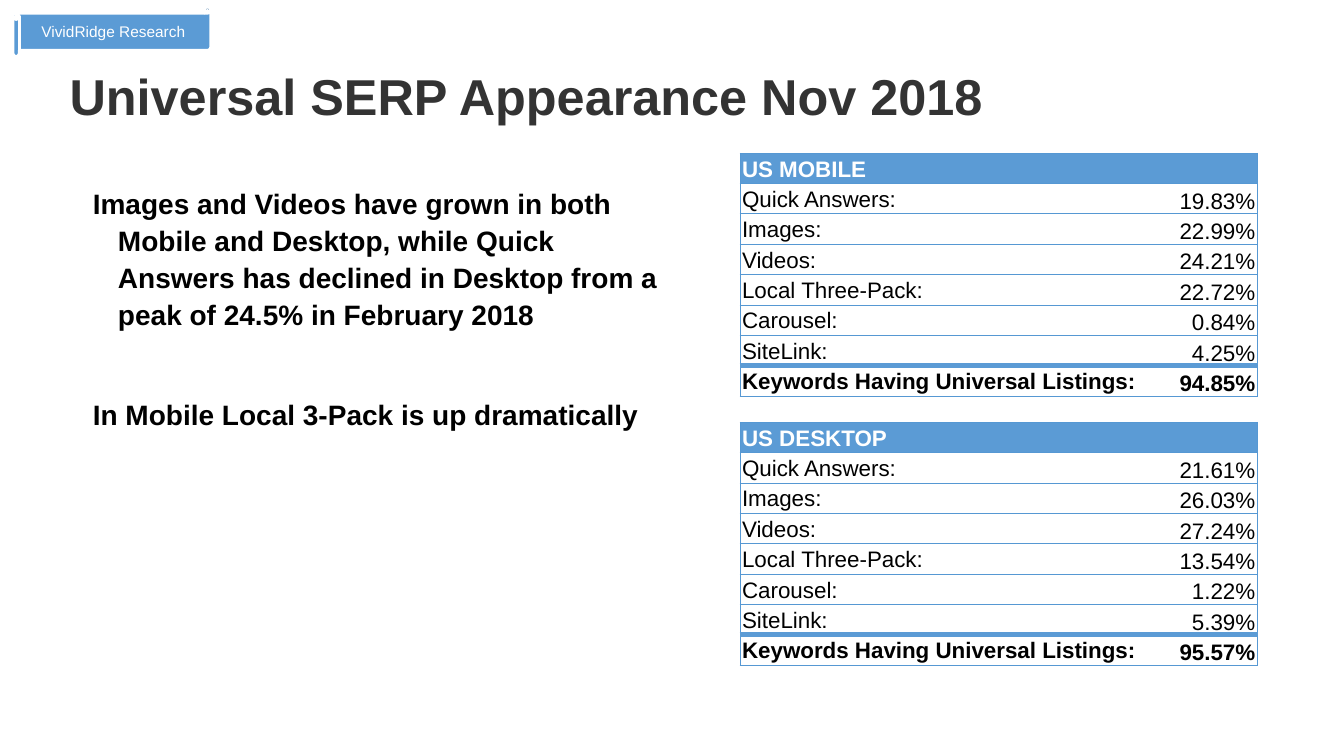
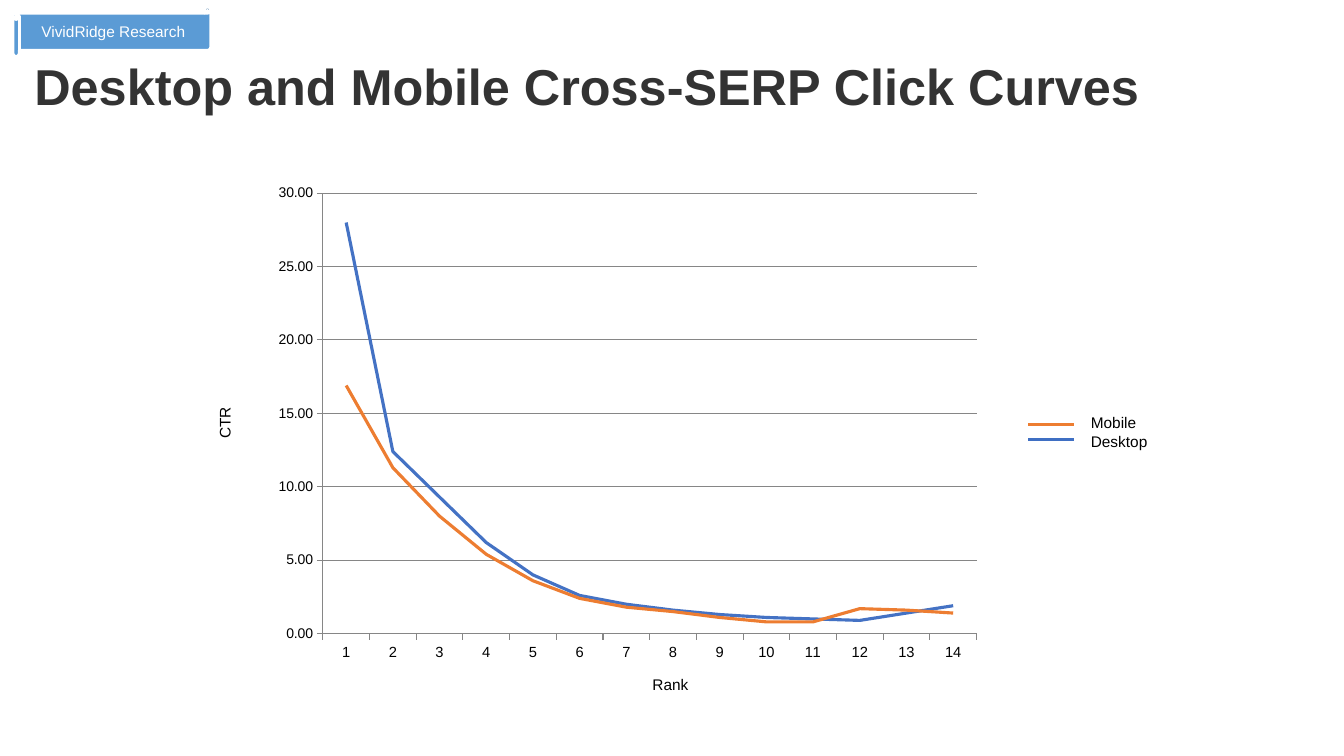
from collections import namedtuple

from lxml.etree import SubElement
from pptx import Presentation
from pptx.chart.data import CategoryChartData
from pptx.dml.color import RGBColor
from pptx.enum.chart import XL_CHART_TYPE, XL_TICK_MARK
from pptx.enum.shapes import MSO_CONNECTOR, MSO_SHAPE
from pptx.enum.text import MSO_ANCHOR, MSO_AUTO_SIZE, PP_ALIGN
from pptx.oxml.ns import qn
from pptx.util import Pt

PX = 9144
FONT = "Arial"
WHITE, BLACK, TITLE_GREY, GRID_GREY = "FFFFFF", "000000", "333333", "868686"
BAND_BLUE, BORDER_BLUE = "5B9BD5", "5698D3"
DESKTOP_BLUE, LEGEND_BLUE, MOBILE_ORANGE = "4472C4", "3F6FC3", "ED7D31"

Box = namedtuple("Box", "left top width height")

LABELS = ["Quick Answers:", "Images:", "Videos:", "Local Three-Pack:",
          "Carousel:", "SiteLink:", "Keywords Having Universal Listings:"]
MOBILE_SHARES = ["19.83%", "22.99%", "24.21%", "22.72%", "0.84%", "4.25%", "94.85%"]
DESKTOP_SHARES = ["21.61%", "26.03%", "27.24%", "13.54%", "1.22%", "5.39%", "95.57%"]
FINDINGS = [
    "Images and Videos have grown in both Mobile and Desktop, while Quick Answers "
    "has declined in Desktop from a peak of 24.5% in February 2018",
    "In Mobile Local 3-Pack is up dramatically",
]
CLICK_CURVES = [
    ("Desktop", DESKTOP_BLUE, [28, 12.4, 9.3, 6.2, 4, 2.6, 2, 1.6, 1.3, 1.1, 1, 0.9, 1.4, 1.9]),
    ("Mobile", MOBILE_ORANGE, [16.9, 11.3, 8, 5.4, 3.6, 2.4, 1.8, 1.5, 1.1, 0.8, 0.8, 1.7, 1.6, 1.4]),
]


def px(length):
    return int(length * PX)


def emu(box):
    return [px(length) for length in box]


def color(value):
    return RGBColor.from_string(value)


def style_font(font, size, value, bold=False):
    font.name, font.size, font.bold = FONT, Pt(size), bold
    font.color.rgb = color(value)


def style_line(line, value, width):
    line.color.rgb = color(value)
    line.width = Pt(width)


def write(para, text, size, value, bold=False, align=PP_ALIGN.LEFT):
    para.alignment = align
    span = para.add_run()
    span.text = text
    style_font(span.font, size, value, bold)


def prepare_placeholder(holder, box, left_inset):
    holder.left, holder.top, holder.width, holder.height = emu(box)
    frame = holder.text_frame
    frame.word_wrap = True
    frame.auto_size = MSO_AUTO_SIZE.NONE
    frame.vertical_anchor = MSO_ANCHOR.TOP
    frame.margin_left = px(left_inset)
    frame.margin_right = frame.margin_top = frame.margin_bottom = px(10)
    return frame


def add_title(page, text, box):
    frame = prepare_placeholder(page.shapes.title, box, 35)
    para = frame.paragraphs[0]
    para.line_spacing = 1.15
    para.space_before = Pt(0)
    write(para, text, 36, TITLE_GREY, bold=True)


def add_findings(page, box):
    frame = prepare_placeholder(page.placeholders[1], box, 10)
    for index, text in enumerate(FINDINGS):
        para = frame.add_paragraph() if index else frame.paragraphs[0]
        para.line_spacing = 1.1
        para.space_before = Pt(45 if index else 0)
        write(para, text, 20, BLACK, bold=True)
        props = para._p.get_or_add_pPr()
        props.set("marL", str(px(50)))
        props.set("indent", str(px(-25)))
        SubElement(props, qn("a:buNone"))


def add_tag(page, box):
    tag = page.shapes.add_shape(MSO_SHAPE.HORIZONTAL_SCROLL, *emu(box))
    tag.shadow.inherit = False
    tag.fill.solid()
    tag.fill.fore_color.rgb = color(BAND_BLUE)
    style_line(tag.line, WHITE, 2)
    tag.text_frame.word_wrap = True
    tag.text_frame.vertical_anchor = MSO_ANCHOR.MIDDLE
    write(tag.text_frame.paragraphs[0], "VividRidge Research", 11, WHITE, align=PP_ALIGN.CENTER)


def add_page(deck, layout, title, title_box):
    page = deck.slides.add_slide(deck.slide_layouts[layout])
    add_title(page, title, title_box)
    add_tag(page, Box(13, 7, 196, 49))
    return page


def set_border(cell, side, border):
    line = SubElement(cell._tc.get_or_add_tcPr(), qn(f"a:ln{side}"))
    if border is None:
        SubElement(line, qn("a:noFill"))
        return
    value, width = border
    line.set("w", str(Pt(width)))
    SubElement(SubElement(line, qn("a:solidFill")), qn("a:srgbClr")).set("val", value)


def style_cell(cell, row, column, last_row):
    thin, thick = (BORDER_BLUE, 0.75), (BAND_BLUE, 4)
    cell.margin_left = cell.margin_right = cell.margin_top = px(2)
    cell.margin_bottom = 0
    cell.vertical_anchor = MSO_ANCHOR.BOTTOM if column else MSO_ANCHOR.MIDDLE
    set_border(cell, "L", None if column else thin)
    set_border(cell, "R", thin if column or row == 0 else None)
    set_border(cell, "T", thick if row == last_row else thin)
    set_border(cell, "B", thick if row == last_row - 1 else thin)
    if row == 0:
        cell.fill.solid()
        cell.fill.fore_color.rgb = color(BAND_BLUE)
    else:
        cell.fill.background()


def add_share_table(page, heading, shares, box):
    rows = [(heading, "")] + list(zip(LABELS, shares))
    last_row = len(rows) - 1
    table = page.shapes.add_table(len(rows), 2, *emu(box)).table
    table.first_row = table.horz_banding = False
    value_width = 107
    table.columns[0].width = px(box.width - value_width)
    table.columns[1].width = px(value_width)
    for row, texts in enumerate(rows):
        table.rows[row].height = px(box.height / len(rows))
        for column, text in enumerate(texts):
            cell = table.cell(row, column)
            style_cell(cell, row, column, last_row)
            if text:
                write(cell.text_frame.paragraphs[0], text, 16, BLACK if row else WHITE,
                      row in (0, last_row), PP_ALIGN.RIGHT if column else PP_ALIGN.LEFT)
    table.cell(0, 0).merge(table.cell(0, 1))


def add_label(shapes, lines, box, align=PP_ALIGN.CENTER, rotation=0):
    label = shapes.add_textbox(*emu(box))
    label.rotation = rotation
    frame = label.text_frame
    frame.word_wrap = True
    for index, text in enumerate(lines):
        para = frame.add_paragraph() if index else frame.paragraphs[0]
        write(para, text, 11, BLACK, align=align)


def add_click_chart(page, box):
    data = CategoryChartData(number_format="0.00")
    data.categories = [str(rank) for rank in range(1, 15)]
    for name, _, values in CLICK_CURVES:
        data.add_series(name, values)
    chart = page.shapes.add_chart(XL_CHART_TYPE.LINE, *emu(box), data).chart
    chart.has_legend = chart.has_title = False
    style_font(chart.font, 10, BLACK)
    chart.plots[0].vary_by_categories = False
    for series, (_, value, _) in zip(chart.plots[0].series, CLICK_CURVES):
        series.smooth = False
        style_line(series.format.line, value, 2.25)
    for axis, size in ((chart.category_axis, 10.5), (chart.value_axis, 10)):
        axis.major_tick_mark = XL_TICK_MARK.OUTSIDE
        axis.minor_tick_mark = XL_TICK_MARK.NONE
        style_font(axis.tick_labels.font, size, BLACK)
        style_line(axis.format.line, GRID_GREY, 0.75)
    scale = chart.value_axis
    scale.minimum_scale, scale.maximum_scale, scale.major_unit = 0, 30, 5
    scale.tick_labels.number_format = "0.00"
    scale.tick_labels.number_format_is_linked = False
    scale.has_major_gridlines = True
    style_line(scale.major_gridlines.format.line, GRID_GREY, 0.75)


def add_legend(page, box):
    shapes = page.shapes.add_group_shape().shapes
    label_offset, key_width = 52, 45
    add_label(shapes, ["Mobile", "Desktop"],
              Box(box.left + label_offset, box.top, box.width - label_offset, box.height),
              PP_ALIGN.LEFT)
    for index, value in enumerate((MOBILE_ORANGE, LEGEND_BLUE)):
        top = px(box.top + 16 + 15 * index)
        key = shapes.add_connector(MSO_CONNECTOR.STRAIGHT, px(box.left), top,
                                   px(box.left + key_width), top)
        style_line(key.line, value, 2.5)
        SubElement(key._element.spPr, qn("a:effectLst"))


def build_appearance(deck):
    page = add_page(deck, 1, "Universal SERP Appearance Nov 2018", Box(34, 46, 1286, 107))
    add_findings(page, Box(57, 172, 609, 207))
    tables = (("US MOBILE", MOBILE_SHARES), ("US DESKTOP", DESKTOP_SHARES))
    for index, (heading, shares) in enumerate(tables):
        add_share_table(page, heading, shares, Box(734, 152 + 267 * index, 513, 241))


def build_click_curves(deck):
    page = add_page(deck, 5, "Desktop and Mobile Cross-SERP Click Curves", Box(-1, 36, 1333, 161))
    chart_box = Box(262, 174, 721, 491)
    add_click_chart(page, chart_box)
    add_label(page.shapes, ["Rank"], Box(632, chart_box.top + chart_box.height, 66, 29))
    add_label(page.shapes, ["CTR"], Box(chart_box.left - 72, 405, 66, 29), rotation=270)
    add_legend(page, Box(1020, 405, 137, 47))


def main():
    deck = Presentation()
    deck.slide_width, deck.slide_height = px(1333), px(750)
    build_appearance(deck)
    build_click_curves(deck)
    deck.save("out.pptx")


if __name__ == "__main__":
    main()
